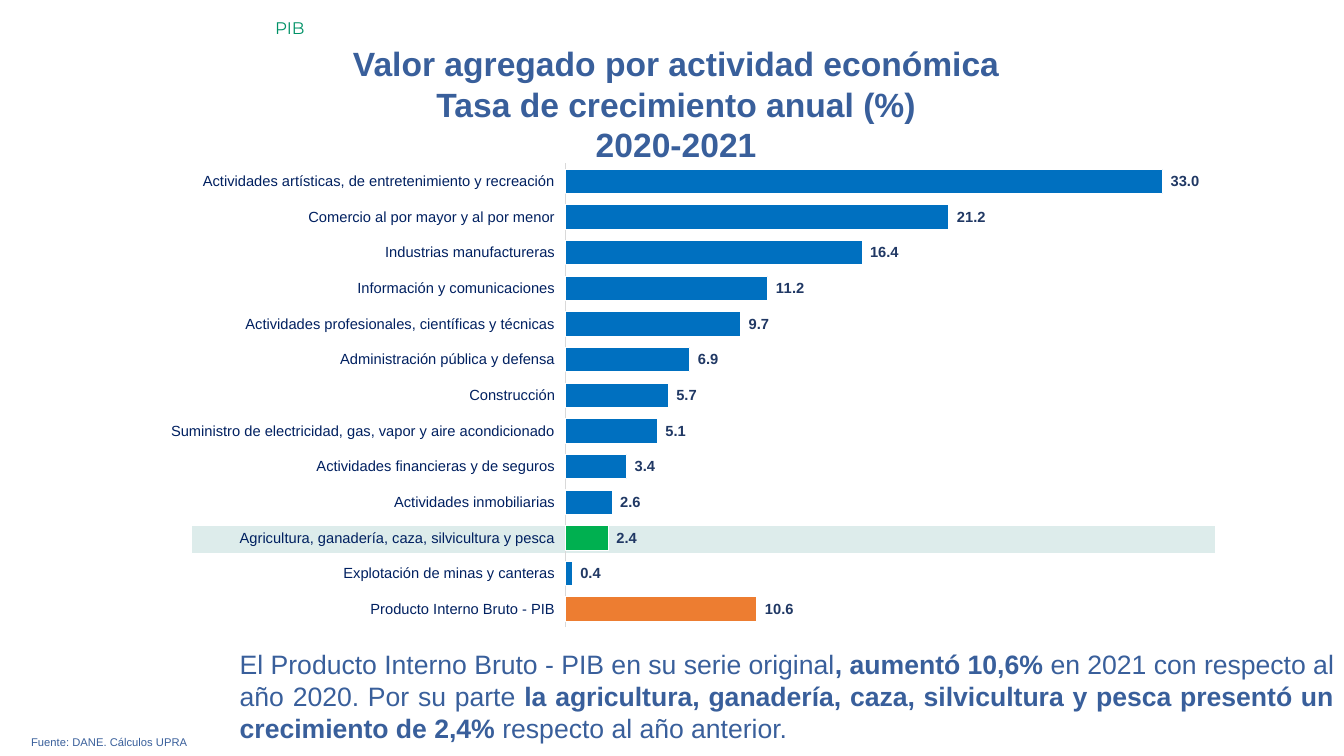
from lxml import etree
from pptx import Presentation, util as u
from pptx.chart.data import CategoryChartData
from pptx.dml.color import RGBColor
from pptx.enum import chart as ch, shapes, text
from pptx.oxml import ns, parse_xml

BLUE, NAVY, LABEL, WHITE = "395F9B", "002060", "203864", "FFFFFF"
BAR, PIB_BAR, FARM_BAR = "0070C0", "ED7D31", "00B050"
FORMAT = '_-* #,##0.0_-;\\-* #,##0.0_-;_-* "-"??_-;'
GROWTH = {
    "Producto Interno Bruto - PIB": 10.6,
    "Explotación de minas y canteras": 0.4,
    "Agricultura, ganadería, caza, silvicultura y pesca": 2.4,
    "Actividades inmobiliarias": 2.6,
    "Actividades financieras y de seguros": 3.4,
    "Suministro de electricidad, gas, vapor y aire acondicionado": 5.1,
    "Construcción": 5.7,
    "Administración pública y defensa": 6.9,
    "Actividades profesionales, científicas y técnicas": 9.7,
    "Información y comunicaciones": 11.2,
    "Industrias manufactureras": 16.4,
    "Comercio al por mayor y al por menor": 21.2,
    "Actividades artísticas, de entretenimiento y recreación": 33.0,
}

prs = Presentation()
prs.slide_width, prs.slide_height = u.Inches(13.33), u.Inches(7.5)


def rgb(color):
    """Turn a hex string into a colour."""
    return RGBColor.from_string(color)


def share(x, y, w, h):
    """Turn percentages of the slide's size into left, top, width, height."""
    sw, sh = prs.slide_width, prs.slide_height
    return [round(part * full / 100) for part, full in zip((x, y, w, h), (sw, sh, sw, sh))]


def style(font, size, color, name="Arial", bold=False):
    """Format a font."""
    font.size, font.name, font.bold = u.Pt(size), name, bold
    font.color.rgb = rgb(color)


def write(sp, lines, size, color=BLUE, name="Arial", bold=False, align="LEFT"):
    """Fill a shape with lines, each a list of (text, bold) runs or a string."""
    tf = sp.text_frame
    tf.word_wrap = True
    tf.auto_size = text.MSO_AUTO_SIZE.SHAPE_TO_FIT_TEXT
    tf.vertical_anchor = text.MSO_ANCHOR.TOP
    for i, line in enumerate(lines):
        p = tf.add_paragraph() if i else tf.paragraphs[0]
        p.alignment = getattr(text.PP_ALIGN, align)
        for words, strong in [(line, bold)] if isinstance(line, str) else line:
            r = p.add_run()
            r.text = words
            style(r.font, size, color, name, strong)


def add_title(s, box):
    """Place the three-line heading."""
    sp = s.shapes.title
    sp.left, sp.top, sp.width, sp.height = share(*box)
    write(sp, ["Valor agregado por actividad económica",
               "Tasa de crecimiento anual (%)", "2020-2021"],
          24, bold=True, align="CENTER")


def add_text(s, box, lines, size, **fmt):
    """Place a text box."""
    write(s.shapes.add_textbox(*share(*box)), lines, size, **fmt)


def add_band(s, box):
    """Place the translucent band behind the farming row."""
    sp = s.shapes.add_shape(shapes.MSO_SHAPE.RECTANGLE, *share(*box))
    sp.shadow.inherit = False
    sp.fill.solid()
    sp.fill.fore_color.rgb = rgb("117A76")
    fill = sp.fill._xPr.find(ns.qn("a:solidFill"))[0]
    etree.SubElement(fill, ns.qn("a:alpha"), val="14000")
    sp.line.color.rgb = rgb(WHITE)
    sp.line.width = u.Pt(1)


def paint(item, color):
    """Fill a bar or series and give it a white outline."""
    item.format.fill.solid()
    item.format.fill.fore_color.rgb = rgb(color)
    item.format.line.color.rgb = rgb(WHITE)
    item.format.line.width = u.Pt(0.75)


def set_plot_area(chart, x, y, w, h):
    """Fix the inner plot area and clear the chart's background."""
    area = chart._chartSpace.chart.plotArea
    for old in area.findall(ns.qn("c:layout")):
        area.remove(old)
    parts = [("layoutTarget", "inner"), ("xMode", "edge"), ("yMode", "edge"),
             ("x", x), ("y", y), ("w", w), ("h", h)]
    tags = "".join(f'<c:{tag} val="{val}"/>' for tag, val in parts)
    area.insert(0, parse_xml(f'<c:layout {ns.nsdecls("c")}><c:manualLayout>{tags}'
                             '</c:manualLayout></c:layout>'))
    clear = (f'<c:spPr {ns.nsdecls("c", "a")}><a:noFill/>'
             '<a:ln><a:noFill/></a:ln></c:spPr>')
    area.append(parse_xml(clear))
    chart._chartSpace.chart.addnext(parse_xml(clear))


def add_growth_chart(s, box):
    """Place the bar chart of growth by activity."""
    data = CategoryChartData(number_format=FORMAT)
    data.categories = list(GROWTH)
    data.add_series("Series 1", list(GROWTH.values()))
    chart = s.shapes.add_chart(ch.XL_CHART_TYPE.BAR_CLUSTERED, *share(*box), data).chart
    chart.has_legend = chart.has_title = False
    style(chart.font, 10, "000000")

    plot = chart.plots[0]
    plot.gap_width, plot.overlap, plot.vary_by_categories = 46, 65, False
    series = plot.series[0]
    paint(series, BAR)
    for i, color in ((0, PIB_BAR), (2, FARM_BAR)):
        paint(series.points[i], color)
    labels = series.data_labels
    labels.show_value = True
    labels.position = ch.XL_LABEL_POSITION.OUTSIDE_END
    labels.number_format, labels.number_format_is_linked = FORMAT, False
    style(labels.font, 10.5, LABEL, bold=True)

    axis = chart.category_axis
    axis.tick_label_position = ch.XL_TICK_LABEL_POSITION.LOW
    axis.major_tick_mark = axis.minor_tick_mark = ch.XL_TICK_MARK.NONE
    axis.format.line.color.rgb = rgb("D9D9D9")
    axis.format.line.width = u.Pt(0.75)
    style(axis.tick_labels.font, 10.5, NAVY)
    values = chart.value_axis
    values.visible = values.has_major_gridlines = False
    values.minimum_scale, values.maximum_scale = 0, 35
    set_plot_area(chart, 0.379, 0.03, 0.592, 0.909)


def growth_slide():
    """Build the slide on growth by economic activity."""
    s = prs.slides.add_slide(prs.slide_layouts[5])
    add_title(s, (3.38, 5.07, 93.85, 17.47))
    add_text(s, (1.58, 96.67, 96.85, 3.2), ["Fuente: DANE. Cálculos UPRA"], 8, align="JUSTIFY")
    add_text(s, (17.1, 85.07, 82.9, 14.13), [[
        ("El Producto Interno Bruto - PIB en su serie original", False),
        (", aumentó 10,6% ", True),
        ("en 2021 con respecto al año 2020. Por su parte ", False),
        ("la agricultura, ganadería, caza, silvicultura y pesca presentó un "
         "crecimiento de 2,4% ", True),
        ("respecto al año anterior.", False)]], 19, align="JUSTIFY")
    add_text(s, (19.73, 1.73, 80.27, 4), ["PIB"], 12, color="009267", name="Montserrat")
    add_band(s, (14.25, 69.47, 76.22, 3.73))
    add_growth_chart(s, (11.85, 19.6, 79.67, 67.47))


if __name__ == "__main__":
    growth_slide()
    prs.save("out.pptx")
